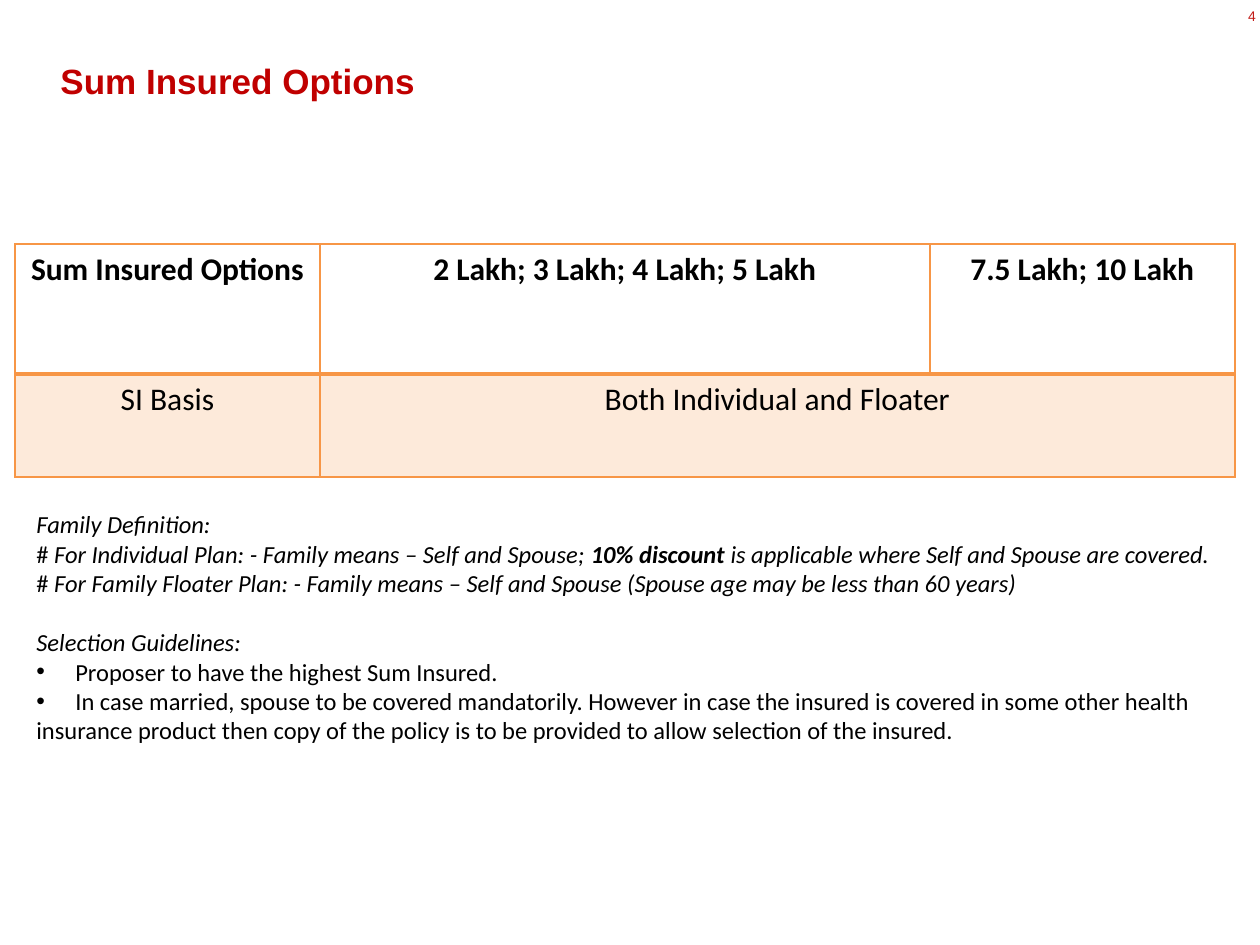
"""Build the slide on sum insured options."""
from dataclasses import dataclass
from typing import Any

from lxml.etree import SubElement
from pptx import Presentation
from pptx.dml.color import RGBColor
from pptx.enum.text import MSO_ANCHOR, PP_ALIGN
from pptx.oxml.ns import qn
from pptx.util import Emu, Pt

SCALE = 914400 / 126
HUES = {"ink": "000000", "title": "C00000", "page": "C21B17",
        "line": "F79646", "tint": "FDEADA"}


@dataclass
class Run:
    text: str
    bold: bool = False
    slant: bool = False


@dataclass
class Para:
    runs: list[Run]
    gap: int = 0
    hang: int = 0


@dataclass
class Cell:
    row: int
    col: int
    text: str


def px(size: int) -> Emu:
    return Emu(round(size * SCALE))


def hue(name: str) -> RGBColor:
    return RGBColor.from_string(HUES[name])


def write(para: Any, text: str, *, size: int, face: str = "Calibri",
          tone: str = "ink", bold: bool = False, slant: bool = False) -> None:
    run = para.add_run()
    run.text = text
    font = run.font
    font.name, font.size, font.bold, font.italic = face, Pt(size), bold, slant
    font.color.rgb = hue(tone)


def add_box(slide: Any, left: int, top: int, width: int, height: int) -> Any:
    frame = slide.shapes.add_textbox(*map(px, (left, top, width, height))).text_frame
    frame.word_wrap = True
    return frame


def add_notes(frame: Any, paras: list[Para]) -> None:
    for i, item in enumerate(paras):
        para = frame.add_paragraph() if i else frame.paragraphs[0]
        if item.hang:
            props = para._p.get_or_add_pPr()
            props.set("marL", str(px(item.hang)))
            props.set("indent", str(-px(item.hang)))
            SubElement(props, qn("a:buFont"), typeface="Arial")
            SubElement(props, qn("a:buChar"), char="•")
        if item.gap:
            para.space_before = Pt(item.gap)
        for run in item.runs:
            write(para, run.text, size=14, bold=run.bold, slant=run.slant)


def set_edge(cell: Any, side: str, width: int) -> None:
    line = SubElement(cell._tc.get_or_add_tcPr(), qn(f"a:ln{side}"), w=str(Pt(width)))
    SubElement(SubElement(line, qn("a:solidFill")), qn("a:srgbClr"), val=HUES["line"])


def add_grid(slide: Any, cells: list[Cell]) -> None:
    cols, rows = (305, 610, 305), (130, 103)
    size = map(px, (15, 244, sum(cols), sum(rows)))
    table = slide.shapes.add_table(len(rows), len(cols), *size).table
    for i, width in enumerate(cols):
        table.columns[i].width = px(width)
    for r, height in enumerate(rows):
        table.rows[r].height = px(height)
        for c in range(len(cols)):
            cell = table.cell(r, c)
            for side in "LRTB":
                mid = (r, side) in ((0, "B"), (1, "T"))
                set_edge(cell, side, 2 if mid else 1)
            if r:
                cell.fill.solid()
                cell.fill.fore_color.rgb = hue("tint")
            else:
                cell.fill.background()
    table.cell(1, 1).merge(table.cell(1, 2))
    for item in cells:
        para = table.cell(item.row, item.col).text_frame.paragraphs[0]
        para.alignment = PP_ALIGN.CENTER
        write(para, item.text, size=18, bold=item.row == 0)


CELLS = [
    Cell(0, 0, "Sum Insured Options"),
    Cell(0, 1, "2 Lakh; 3 Lakh; 4 Lakh; 5 Lakh"),
    Cell(0, 2, "7.5 Lakh; 10 Lakh"),
    Cell(1, 0, "SI Basis"),
    Cell(1, 1, "Both Individual and Floater"),
]
NOTES = [
    Para([Run("Family Definition:", slant=True)]),
    Para([Run("# "),
          Run("For Individual Plan: - Family means – Self and Spouse; ", slant=True),
          Run("10% discount ", bold=True, slant=True),
          Run("is applicable where Self and Spouse are covered.", slant=True)]),
    Para([Run("# "),
          Run("For Family Floater Plan: - Family means – Self and Spouse "
              "(Spouse age may be less than 60 years)", slant=True)]),
    Para([Run("Selection Guidelines:", slant=True)], gap=17),
    Para([Run("Proposer to have the highest Sum Insured.")], hang=39),
    Para([Run("In case married, spouse to be covered mandatorily. However in case "
              "the insured is covered in some other health")], hang=39),
    Para([Run("insurance product then copy of the policy is to be provided "
              "to allow selection of the insured.")]),
]


def main() -> None:
    deck = Presentation()
    deck.slide_width, deck.slide_height = px(1260), px(945)
    slide = deck.slides.add_slide(deck.slide_layouts[6])

    page = add_box(slide, 1228, 8, 28, 24)
    page.margin_left = page.margin_right = page.margin_top = page.margin_bottom = 0
    page.paragraphs[0].alignment = PP_ALIGN.RIGHT
    write(page.paragraphs[0], "4", size=8, face="Arial", tone="page")

    title = add_box(slide, 48, 60, 1155, 44)
    title.vertical_anchor = MSO_ANCHOR.MIDDLE
    title.paragraphs[0].line_spacing = Pt(22)
    write(title.paragraphs[0], "Sum Insured Options", size=20, face="Arial",
          tone="title", bold=True)

    add_grid(slide, CELLS)
    add_notes(add_box(slide, 24, 503, 1212, 251), NOTES)
    deck.save("out.pptx")


if __name__ == "__main__":
    main()
